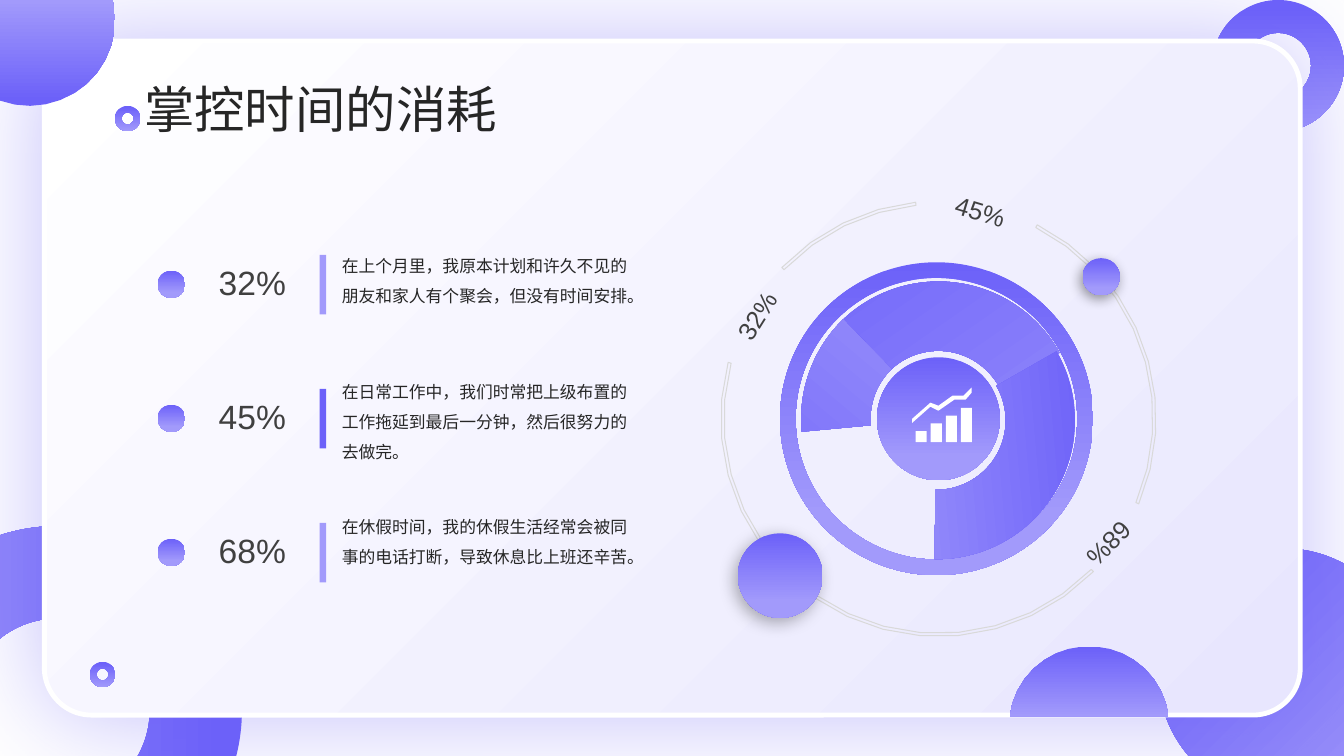
from collections import namedtuple
from dataclasses import dataclass
from math import cos, radians, sin

from lxml import etree
from pptx import Presentation
from pptx import util as u
from pptx.dml.color import RGBColor
from pptx.enum import shapes, text
from pptx.oxml.ns import qn

Pt = u.Pt
Box = namedtuple("Box", "left top width height")
Gradient = namedtuple("Gradient", "start first end last angle")
Shadow = namedtuple("Shadow", "colour alpha blur distance direction")
Row = namedtuple("Row", "share accent body_shift note")
Kind = shapes.MSO_SHAPE


@dataclass(frozen=True)
class Theme:
    violet: str = "6C61F9"
    lilac: str = "A29AFB"
    mist: str = "E8E6FE"
    white: str = "FFFFFF"
    hairline: str = "D9D9D9"
    ink: str = "262626"
    grey: str = "404040"
    black: str = "000000"
    latin: str = "Arial"
    chinese: str = "Noto Sans CJK SC"
    title: int = 36
    share: int = 24
    label: int = 18
    body: int = 12


THEME = Theme()
BALL = Gradient(0, THEME.violet, 81, THEME.lilac, 90)
RING = Gradient(5, THEME.violet, 100, THEME.lilac, 90)
FULL = Gradient(0, THEME.violet, 100, THEME.lilac, 90)

ROWS = [
    Row("32% ", THEME.lilac, -10.4, "在上个月里，我原本计划和许久不见的朋友和家人有个聚会，但没有时间安排。"),
    Row("45% ", THEME.violet, -15.9, "在日常工作中，我们时常把上级布置的工作拖延到最后一分钟，然后很努力的去做完。"),
    Row("68% ", THEME.lilac, -15.4, "在休假时间，我的休假生活经常会被同事的电话打断，导致休息比上班还辛苦。"),
]


def apply(target, values):
    for name, value in values.items():
        setattr(target, name, value)


def around(x, y, width, height=None):
    """Box of the given size centred on a point."""
    height = height or width
    return Box(x - width / 2, y - height / 2, width, height)


def arc(x, y, radius, start, end):
    """Points along a circle, about 10 degrees apart, from start to end."""
    count = max(2, round(abs(end - start) / 10))
    angles = [radians(start + (end - start) * i / count) for i in range(count + 1)]
    return [(x + radius * cos(a), y + radius * sin(a)) for a in angles]


def paint(shape, fill=None, line=None, weight=0.75, shadow=None):
    shape.shadow.inherit = False
    if isinstance(fill, Gradient):
        shape.fill.gradient()
        shape.fill.gradient_angle = (360 - fill.angle) % 360
        ends = [(fill.start, fill.first), (fill.end, fill.last)]
        for stop, (position, colour) in zip(shape.fill.gradient_stops, ends):
            stop.position = position / 100
            stop.color.rgb = RGBColor.from_string(colour)
    elif fill:
        shape.fill.solid()
        shape.fill.fore_color.rgb = RGBColor.from_string(fill)
    else:
        shape.fill.background()
    if line:
        shape.line.color.rgb = RGBColor.from_string(line)
        shape.line.width = Pt(weight)
    else:
        shape.line.fill.background()
    if shadow:
        effects = shape._element.spPr.find(qn("a:effectLst"))
        outer = etree.SubElement(effects, qn("a:outerShdw"), {
            "blurRad": str(Pt(shadow.blur)), "dist": str(Pt(shadow.distance)),
            "dir": str(shadow.direction * 60000), "algn": "ctr", "rotWithShape": "0"})
        colour = etree.SubElement(outer, qn("a:srgbClr"), val=shadow.colour)
        etree.SubElement(colour, qn("a:alpha"), val=str(shadow.alpha * 1000))


def add_preset(page, kind, box, adjust=(), rotation=0, **style):
    shape = page.shapes.add_shape(kind, *map(Pt, box))
    for index, value in enumerate(adjust):
        shape.adjustments[index] = value
    shape.rotation = rotation
    paint(shape, **style)


def add_outline(page, points, **style):
    corners = [(Pt(x), Pt(y)) for x, y in points]
    builder = page.shapes.build_freeform(*corners[0])
    builder.add_line_segments(corners[1:], close=True)
    paint(builder.convert_to_shape(), **style)


def add_text(page, box, words, size, colour, font=THEME.latin, wrap=True,
             rotation=0, frame=None, para=None):
    shape = page.shapes.add_textbox(*map(Pt, box))
    shape.rotation = rotation
    apply(shape.text_frame, {"word_wrap": wrap, **(frame or {})})
    paragraph = shape.text_frame.paragraphs[0]
    apply(paragraph, para or {})
    span = paragraph.add_run()
    span.text = words
    apply(span.font, {"size": Pt(size), "name": font})
    span.font.color.rgb = RGBColor.from_string(colour)
    etree.SubElement(span.font._element, qn("a:ea"), typeface=font)


def draw_backdrop(page, box):
    left, top, width, height = box
    right, bottom = left + width, top + height
    add_preset(page, Kind.DONUT, Box(left - 90.7, bottom - 164.2, 263.5, 263.5),
               [0.25], 90, fill=RING)
    add_preset(page, Kind.OVAL, Box(right - 132.7, bottom - 148.3, 179.3, 179.3),
               fill=FULL._replace(angle=45))
    add_preset(page, Kind.DONUT, Box(right - 94, top, 94, 94), [0.25], fill=RING)
    add_preset(page, Kind.ROUNDED_RECTANGLE,
               Box(left + 31.7, top + 29.3, width - 62.9, height - 58.5), [0.07],
               fill=Gradient(0, THEME.mist, 100, THEME.white, 225),
               line=THEME.white, weight=3.5, shadow=Shadow(THEME.violet, 40, 78, 0, 0))
    add_outline(page, [(left, top)] + arc(left + 21, top + 14.4, 61.2, -13.6, 110),
                fill=RING._replace(angle=270))
    for x, y in [(left + 91.2, top + 84.7), (left + 73.3, bottom - 58.2)]:
        add_preset(page, Kind.DONUT, around(x, y, 18.2), [0.26], fill=RING)
    add_outline(page, arc(right - 182, bottom - 21.2, 57.2, 187, 353), fill=FULL)


def draw_title(page, box):
    add_text(page, box, "掌控时间的消耗", THEME.title, THEME.ink, THEME.chinese, wrap=False,
             frame={"vertical_anchor": text.MSO_ANCHOR.MIDDLE})


def draw_row(page, box, row):
    left, top = box.left, box.top
    add_preset(page, Kind.OVAL, Box(left, top + 11.3, 19.6, 19.6), fill=BALL)
    add_text(page, Box(left + 34.3, top + 1.6, 73.4, 36), row.share, THEME.share, THEME.grey,
             para={"alignment": text.PP_ALIGN.CENTER})
    add_preset(page, Kind.RECTANGLE, Box(left + 115.7, top, 4.7, box.height), fill=row.accent)
    add_text(page, Box(left + 124.5, top + row.body_shift, box.width - 124.5, 48), row.note,
             THEME.body, THEME.ink, para={"line_spacing": 1.5})


def draw_rows(page, box):
    pitch = box.height / len(ROWS)
    for index, row in enumerate(ROWS):
        draw_row(page, Box(box.left, box.top + index * pitch, box.width, 42.5), row)


def draw_growth_icon(page, box):
    for index in range(4):
        tall = 8 + 5.5 * index
        add_preset(page, Kind.RECTANGLE,
                   Box(box.left + 2.4 + 10.8 * index, box.top + box.height - tall, 7.9, tall),
                   fill=THEME.white)
    trend = [(36.7, 5.8), (28.8, 5.8), (18.7, 13), (13, 10.8), (0, 22.3), (0, 25.2),
             (13, 13.7), (18.7, 16.6), (30.2, 8.6), (38.2, 8.6), (42.5, 3.6), (42.5, 0)]
    add_outline(page, [(box.left + x, box.top + y) for x, y in trend], fill=THEME.white)


def draw_wheel(page, box):
    radius = box.width / 2
    x, y = box.left + radius, box.top + radius
    add_preset(page, Kind.DONUT, around(x - 1.4, y, 223.5), [0.05], fill=BALL)
    for start, end in [(-63, 23), (224, 264), (44.6, 195)]:
        band = arc(x, y, radius, start, end) + arc(x, y, radius - 2.2, end, start)
        add_outline(page, band, line=THEME.hairline)
    for dx, dy, size, shadow in [(-113, 112.1, 60.5, Shadow(THEME.black, 29, 12, 4, 130)),
                                 (116.3, -101.4, 26.6, Shadow(THEME.black, 40, 9, 3, 120))]:
        add_preset(page, Kind.OVAL, around(x + dx, y + dy, size), fill=BALL, shadow=shadow)
    for dx, dy, turn, start, fill in [(0, 1, 325.2, 156.5, FULL), (1, 0, 220, 188.78, BALL),
                                      (-1.5, 1.3, 85, 147.03, BALL)]:
        add_preset(page, Kind.BLOCK_ARC, around(x + dx, y + dy, 198),
                   [start, 3.45, 0.25], turn, fill=fill)
    add_preset(page, Kind.OVAL, around(x, y, 87.8), fill=BALL)
    places = [(-128.4, -75.8, 302), (32.4, -147.2, 17), (120.4, 91.6, 135)]
    for row, (dx, dy, turn) in zip(ROWS, places):
        add_text(page, around(x + dx, y + dy, 57.6, 29.1), row.share, THEME.label, THEME.grey,
                 wrap=False, rotation=turn, para={"alignment": text.PP_ALIGN.CENTER},
                 frame={"auto_size": text.MSO_AUTO_SIZE.SHAPE_TO_FIT_TEXT})
    draw_growth_icon(page, Box(x - 18.7, y - 22.3, 42.5, 39.1))


def main():
    deck = Presentation()
    apply(deck, {"slide_width": Pt(960), "slide_height": Pt(540)})
    page = deck.slides.add_slide(deck.slide_layouts[6])
    draw_backdrop(page, Box(0, 0, 960, 540))
    draw_title(page, Box(95.8, 51.8, 266.4, 51))
    draw_rows(page, Box(112.6, 182, 353.2, 287.3))
    draw_wheel(page, Box(514.8, 143.6, 311, 311))
    deck.save("out.pptx")


if __name__ == "__main__":
    main()
